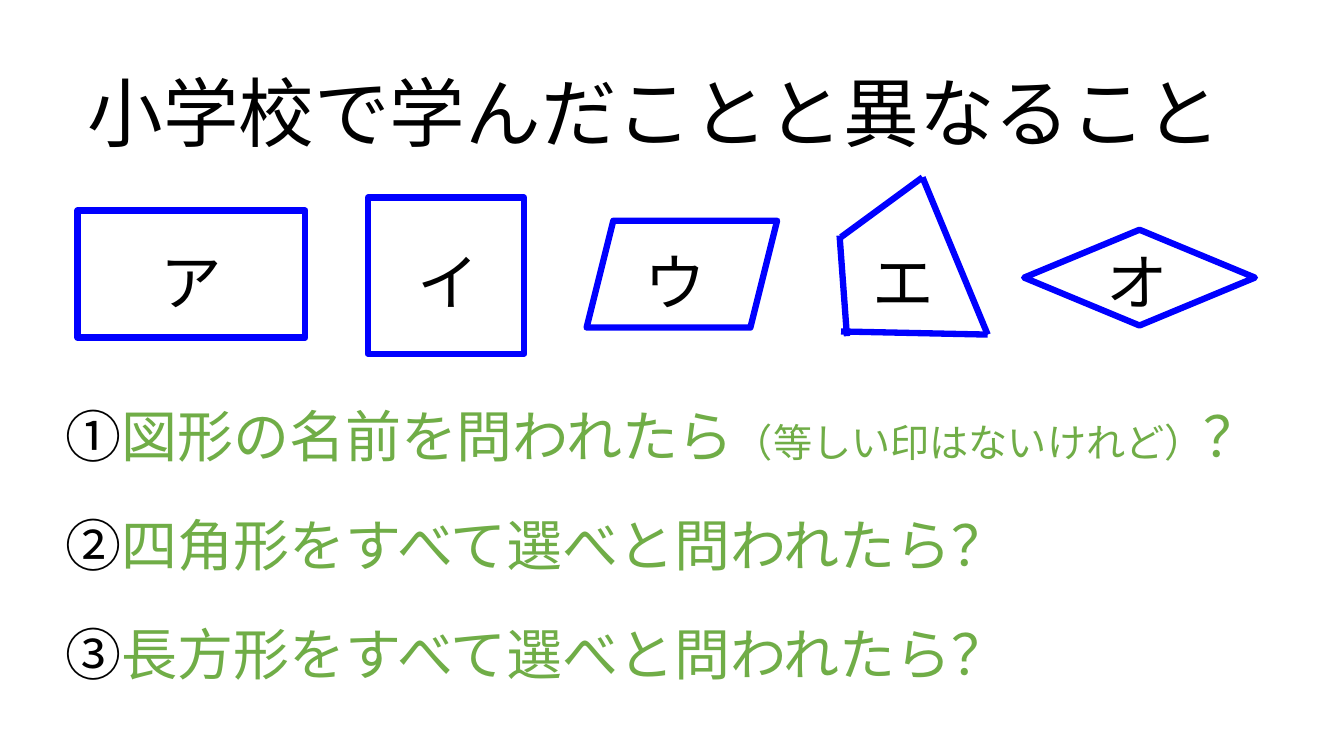
import pptx
import pptx.util
import pptx.dml.color
import pptx.enum.shapes
import pptx.enum.text
import pptx.oxml.ns
import lxml.etree

Pt = pptx.util.Pt
KIND = pptx.enum.shapes.MSO_SHAPE
FONT = "Noto Sans CJK JP"
BLACK, BLUE, GREEN = "000000", "0000FF", "70AD47"


def color(text):
    return pptx.dml.color.RGBColor.from_string(text)


def sub(node, tag, **attrs):
    return lxml.etree.SubElement(node, pptx.oxml.ns.qn(tag), **attrs)


def write(slide, box, runs, wrap=True):
    """Place one line of text; each run is (words, size, hex colour)."""
    frame = slide.shapes.add_textbox(*map(Pt, box)).text_frame
    frame.word_wrap = wrap
    frame.auto_size = pptx.enum.text.MSO_AUTO_SIZE.SHAPE_TO_FIT_TEXT
    para = frame.paragraphs[0]
    para.font.name = FONT
    sizes = {size for _, size, _ in runs}
    tints = {tint for _, _, tint in runs}
    if len(sizes) == 1:
        para.font.size = Pt(runs[0][1])
    if len(tints) == 1:
        para.font.color.rgb = color(runs[0][2])
    sub(para._p.pPr.defRPr if hasattr(para._p.pPr, "defRPr")
        else para._p.pPr.find(pptx.oxml.ns.qn("a:defRPr")),
        "a:ea", typeface=FONT)
    for words, size, tint in runs:
        run = para.add_run()
        run.text = words
        if len(sizes) > 1:
            run.font.size = Pt(size)
        if len(tints) > 1:
            run.font.color.rgb = color(tint)


def stroke(part):
    part.line.color.rgb = color(BLUE)
    part.line.width = Pt(4.5)


def figure(slide, kind, box):
    shape = slide.shapes.add_shape(kind, *map(Pt, box))
    shape.shadow.inherit = False
    shape.fill.background()
    stroke(shape)


def kite(slide, box):
    """Draw an irregular four-sided figure from separate sides."""
    left, top, width, height = box
    sides = [
        ((0, 0.37), (0.05, 1.01)),
        ((0.01, 0.98), (1, 1)),
        ((0.01, 0.38), (0.56, 0)),
        ((0.56, 0), (1, 1)),
    ]
    group = slide.shapes.add_group_shape()
    for ends in sides:
        spots = [Pt(v) for x, y in ends
                 for v in (left + x * width, top + y * height)]
        side = group.shapes.add_connector(
            pptx.enum.shapes.MSO_CONNECTOR.STRAIGHT, *spots)
        stroke(side)
        sub(side._element.spPr, "a:effectLst")


def shapes(slide, box):
    """Row of quadrilaterals, each with its letter."""
    left, top, _, _ = box
    for kind, x, y, width, height in [
        (KIND.RECTANGLE, 0, 23.8, 162.7, 90.7),
        (KIND.RECTANGLE, 207.4, 14.4, 111.6, 111.6),
        (KIND.PARALLELOGRAM, 363.6, 31, 136.1, 76.3),
        (KIND.DIAMOND, 676.1, 37.4, 164.9, 68.4),
    ]:
        figure(slide, kind, (left + x, top + y, width, height))
    kite(slide, (left + 544.3, top, 105.8, 112.3))
    for letter, x in zip("アイウエオ", (51.8, 235.4, 398.2, 560.9, 727.9)):
        write(slide, (left + x, top + 43.9, 59, 60.5),
              [(letter, 44, BLACK)], wrap=False)


def asks(slide, box):
    """Numbered questions at an equal pitch."""
    left, top, width, height = box
    short = 709.2
    rows = [
        (width, "①", [("図形の名前を問われたら", 40, GREEN),
                      ("（等しい印はないけれど）", 28, GREEN),
                      ("？", 40, GREEN)]),
        (short, "②", [("四角形をすべて選べと問われたら？", 40, GREEN)]),
        (short, "③", [("長方形をすべて選べと問われたら？", 40, GREEN)]),
    ]
    pitch = (height - 55.4) / (len(rows) - 1)
    for i, (span, mark, runs) in enumerate(rows):
        write(slide, (left, top + i * pitch, span, 55.4),
              [(mark, 40, BLACK)] + runs)


def title(slide, box):
    write(slide, box, [("小学校で学んだことと異なること", 54, BLACK)])


def main():
    deck = pptx.Presentation()
    deck.slide_width, deck.slide_height = Pt(960), Pt(540)
    slide = deck.slides.add_slide(deck.slide_layouts[6])
    shapes(slide, (55.4, 126.7, 841, 126))
    asks(slide, (39.6, 283, 879.8, 211.6))
    title(slide, (55.4, 43.2, 825.1, 72.7))
    deck.save("out.pptx")


if __name__ == "__main__":
    main()
